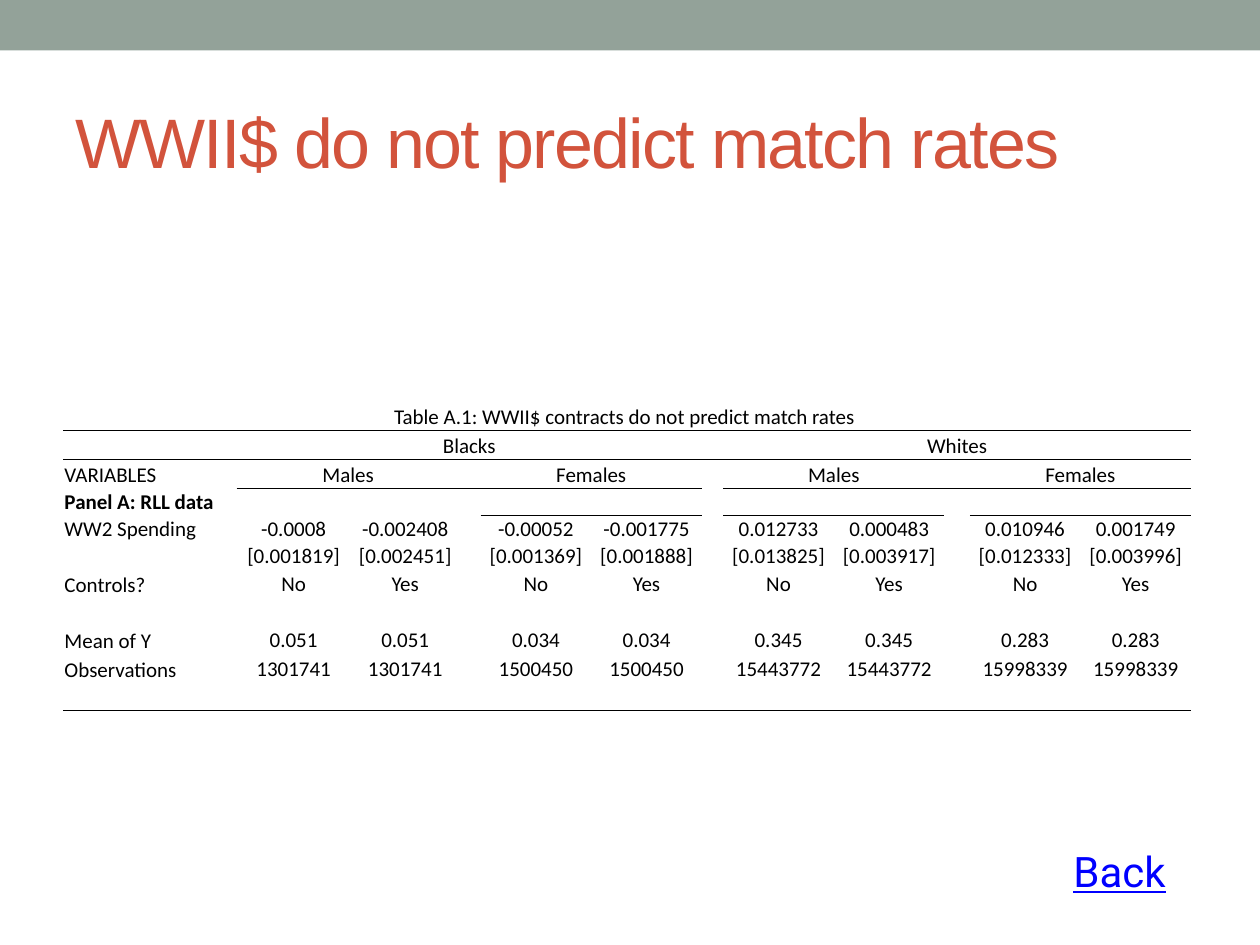
"""Build a slide with a regression table on contract spending and match rates."""
from dataclasses import dataclass

from lxml.etree import SubElement
from pptx import Presentation
from pptx.dml.color import RGBColor
from pptx.enum.shapes import MSO_SHAPE
from pptx.enum.text import MSO_ANCHOR as Anchor, PP_ALIGN as Align
from pptx.oxml.ns import qn
from pptx.util import Cm, Pt

SAGE = RGBColor(0x93, 0xA2, 0x99)
RUST = RGBColor(0xD2, 0x53, 0x3C)
LINK_BLUE = RGBColor(0x00, 0x00, 0xFF)
BLACK = RGBColor(0x00, 0x00, 0x00)

PLAIN_STYLE = "{2D5ABB26-0587-4C30-8999-92F81FD0307C}"
COLUMN_WIDTHS = (3.5, 2.3, 2.2, 0.42, 2.23, 2.23, 0.43, 2.23, 2.23, 0.51, 2.23, 2.23)
ROW_HEIGHTS = (0.54, 0.58, 0.58, 0.54, 0.54, 0.54, 0.58, 0.54, 0.58, 0.58, 0.54)
VALUE_COLUMNS = (1, 2, 4, 5, 7, 8, 10, 11)


@dataclass(frozen=True)
class TextBox:
    text: str
    left: float
    top: float
    width: float
    height: float
    font: str
    size: int
    color: RGBColor
    anchor: Anchor = Anchor.TOP
    wrap: bool = True
    underline: bool = False
    spacing: int = 0


@dataclass(frozen=True)
class Heading:
    text: str
    row: int
    first: int
    last: int
    align: Align = Align.CENTER
    bold: bool = False


@dataclass(frozen=True)
class DataRow:
    row: int
    label: str
    values: tuple[str, ...]


@dataclass(frozen=True)
class Rule:
    row: int
    first: int
    last: int


TEXT_BOXES = (
    TextBox("WWII$ do not predict match rates", 1.27, 1.47, 22.86, 2.74,
            "Arial", 40, RUST, anchor=Anchor.MIDDLE, spacing=-100),
    TextBox("Back", 21.39, 16.92, 2.41, 1.27,
            "Roboto", 24, LINK_BLUE, wrap=False, underline=True),
)
HEADINGS = (
    Heading("Table A.1: WWII$ contracts do not predict match rates ", 0, 0, 11),
    Heading("Blacks", 1, 1, 5),
    Heading("Whites", 1, 7, 11),
    Heading("VARIABLES", 2, 0, 0, Align.LEFT),
    Heading("Males", 2, 1, 2),
    Heading("Females", 2, 4, 5),
    Heading("Males", 2, 7, 8),
    Heading("Females", 2, 10, 11),
    Heading("Panel A: RLL data", 3, 0, 1, Align.LEFT, bold=True),
)
DATA_ROWS = (
    DataRow(4, "WW2 Spending", ("-0.0008", "-0.002408", "-0.00052", "-0.001775",
                                "0.012733", "0.000483", "0.010946", "0.001749")),
    DataRow(5, "", ("[0.001819]", "[0.002451]", "[0.001369]", "[0.001888]",
                    "[0.013825]", "[0.003917]", "[0.012333]", "[0.003996]")),
    DataRow(6, "Controls?", ("No", "Yes") * 4),
    DataRow(8, "Mean of Y", ("0.051", "0.051", "0.034", "0.034",
                             "0.345", "0.345", "0.283", "0.283")),
    DataRow(9, "Observations", ("1301741", "1301741", "1500450", "1500450",
                                "15443772", "15443772", "15998339", "15998339")),
)
RULES = (Rule(0, 0, 11), Rule(1, 1, 5), Rule(1, 7, 11), Rule(2, 4, 5),
         Rule(2, 7, 8), Rule(2, 10, 11), Rule(10, 0, 11))


def add_text_box(slide, box: TextBox) -> None:
    shape = slide.shapes.add_textbox(Cm(box.left), Cm(box.top), Cm(box.width), Cm(box.height))
    frame = shape.text_frame
    frame.word_wrap = box.wrap
    frame.vertical_anchor = box.anchor
    paragraph = frame.paragraphs[0]
    run = paragraph.add_run()
    run.text = box.text
    font = paragraph.font
    font.name, font.size, font.underline = box.font, Pt(box.size), box.underline
    font.color.rgb = box.color
    if box.spacing:
        run._r.get_or_add_rPr().set("spc", str(box.spacing))


def prepare_cell(cell) -> None:
    cell.fill.background()
    cell.margin_left = cell.margin_right = cell.margin_top = Cm(0.03)
    cell.margin_bottom = 0
    end = SubElement(cell.text_frame.paragraphs[0]._p, qn("a:endParaRPr"))
    end.set("sz", "1200")
    SubElement(end, qn("a:latin")).set("typeface", "Calibri")


def write_cell(cell, text: str, align: Align, anchor: Anchor, bold: bool = False) -> None:
    cell.vertical_anchor = anchor
    paragraph = cell.text_frame.paragraphs[0]
    paragraph.alignment = align
    paragraph.add_run().text = text
    font = paragraph.font
    font.name, font.size, font.bold = "Calibri", Pt(12), bold
    font.color.rgb = BLACK


def add_border(cell, tag: str) -> None:
    properties = cell._tc.get_or_add_tcPr()
    line = properties.makeelement(qn(tag), {"w": str(Pt(0.5))})
    fill = SubElement(line, qn("a:solidFill"))
    SubElement(fill, qn("a:srgbClr")).set("val", str(BLACK))
    position = 1 if properties.find(qn("a:lnT")) is not None else 0
    properties.insert(position, line)


def draw_rule(table, rule: Rule) -> None:
    for column in range(rule.first, rule.last + 1):
        add_border(table.cell(rule.row, column), "a:lnB")
        if rule.row + 1 < len(ROW_HEIGHTS):
            add_border(table.cell(rule.row + 1, column), "a:lnT")


def add_results_table(slide) -> None:
    frame = slide.shapes.add_table(len(ROW_HEIGHTS), len(COLUMN_WIDTHS), Cm(1.27), Cm(8.13),
                                   Cm(sum(COLUMN_WIDTHS)), Cm(sum(ROW_HEIGHTS)))
    table = frame.table
    table.first_row = table.horz_banding = False
    table._tbl.tblPr.find(qn("a:tableStyleId")).text = PLAIN_STYLE
    for column, width in zip(table.columns, COLUMN_WIDTHS):
        column.width = Cm(width)
    for row, height in zip(table.rows, ROW_HEIGHTS):
        row.height = Cm(height)
    for cell in table.iter_cells():
        prepare_cell(cell)
    for heading in HEADINGS:
        cell = table.cell(heading.row, heading.first)
        if heading.last > heading.first:
            cell.merge(table.cell(heading.row, heading.last))
        write_cell(cell, heading.text, heading.align, Anchor.BOTTOM, heading.bold)
    for data in DATA_ROWS:
        if data.label:
            write_cell(table.cell(data.row, 0), data.label, Align.LEFT, Anchor.BOTTOM)
        for column, value in zip(VALUE_COLUMNS, data.values):
            write_cell(table.cell(data.row, column), value, Align.CENTER, Anchor.MIDDLE)
    for rule in RULES:
        draw_rule(table, rule)


def main() -> None:
    presentation = Presentation()
    presentation.slide_width, presentation.slide_height = Cm(25.4), Cm(19.05)
    slide = presentation.slides.add_slide(presentation.slide_layouts[6])
    band = slide.shapes.add_shape(MSO_SHAPE.RECTANGLE, 0, 0, Cm(25.4), Cm(1.02))
    band.shadow.inherit = False
    band.fill.solid()
    band.fill.fore_color.rgb = SAGE
    band.line.fill.background()
    add_results_table(slide)
    for box in TEXT_BOXES:
        add_text_box(slide, box)
    presentation.save("out.pptx")


if __name__ == "__main__":
    main()
